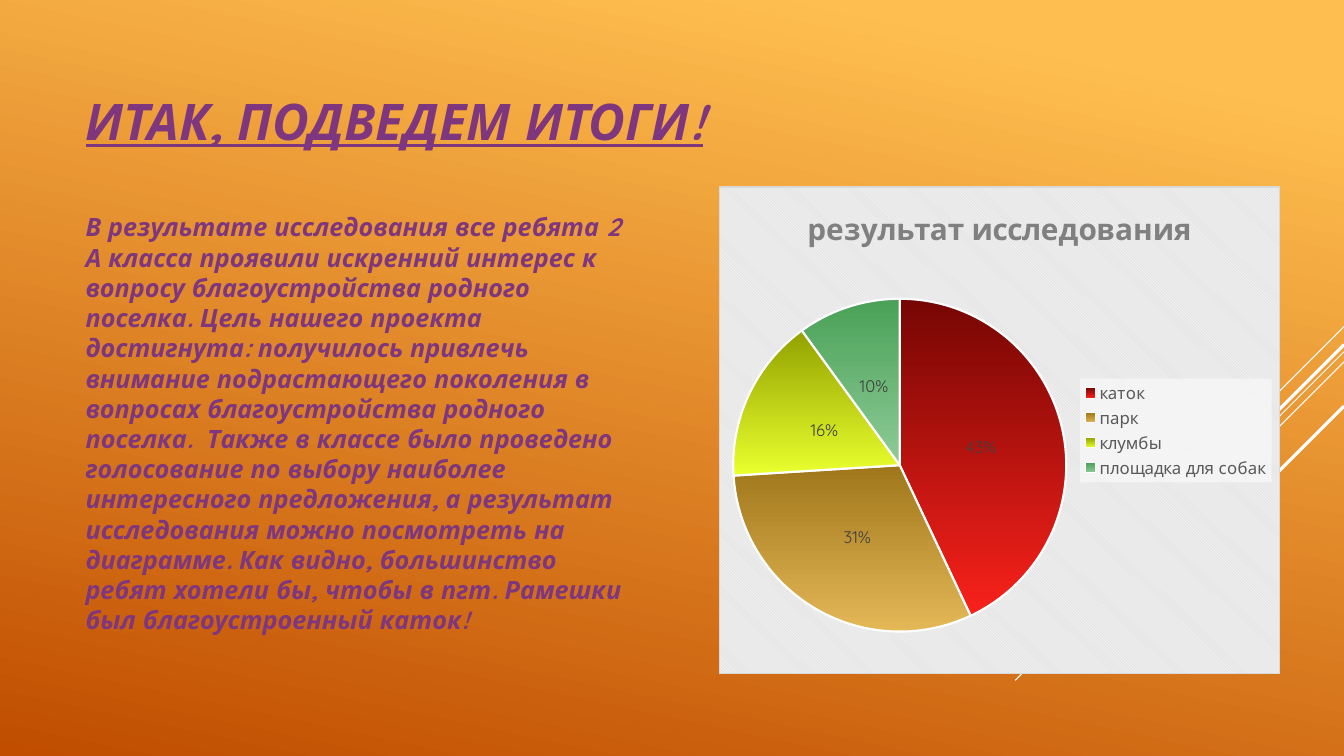
from lxml import etree
from pptx import Presentation
from pptx.chart.data import CategoryChartData
from pptx.dml.color import RGBColor
from pptx.enum.chart import XL_CHART_TYPE, XL_LABEL_POSITION, XL_LEGEND_POSITION
from pptx.enum.text import MSO_ANCHOR
from pptx.oxml import parse_xml
from pptx.oxml.ns import nsdecls, qn
from pptx.util import Inches, Pt

FONT = "Quicksand"
COLORS = {
    "sun": "FFBF50", "rust": "C04D00", "purple": "7E367E", "white": "FFFFFF",
    "title": "808080", "legend": "595959", "label": "404040",
    "stripe": "E6E6E6", "border": "D9D9D9",
}
TITLE = "ИТАК, ПОДВЕДЕМ ИТОГИ!"
BODY = (
    "В результате исследования все ребята 2 А класса проявили искренний интерес "
    "к вопросу благоустройства родного поселка. Цель нашего проекта достигнута: "
    "получилось привлечь внимание подрастающего поколения в вопросах "
    "благоустройства родного поселка.  Также в классе было проведено голосование "
    "по выбору наиболее интересного предложения, а результат исследования можно "
    "посмотреть на диаграмме. Как видно, большинство ребят хотели бы, чтобы в "
    "пгт. Рамешки был благоустроенный каток!"
)
TEXTS = [
    (TITLE, (0.75, 0.68, 9.33, 0.87), MSO_ANCHOR.BOTTOM, 0.9,
     {"size": Pt(36), "underline": True}),
    (BODY, (0.75, 2.05, 5.68, 4.99), MSO_ANCHOR.TOP, 1.0, {"size": Pt(18)}),
]
CHART_TITLE = "результат исследования"
CHART_BOX = (7.13, 1.85, 5.57, 4.84)
VOTES = [
    ("каток", 43, "760603", "F9211B"),
    ("парк", 31, "9F761A", "E4B857"),
    ("клумбы", 16, "92A200", "EAFF2E"),
    ("площадка для собак", 10, "4AA157", "8ECB97"),
]
SLIDE_W = 13.33
RAYS = [(3.24, 1, 0.75), (3.49, 3.26, 0.75), (3.59, 2.07, 0.75),
        (3.42, 1.91, 2.25), (4.03, 1.39, 2.25)]


def rgb(name):
    return RGBColor.from_string(COLORS.get(name, name))


def style(font, **values):
    color = values.pop("color")
    for key, value in {"name": FONT, **values}.items():
        setattr(font, key, value)
    font.color.rgb = rgb(color)


def gradient(fill, angle, stops):
    fill.gradient()
    fill.gradient_angle = 360 - angle
    for stop, (pos, color) in zip(fill.gradient_stops, stops):
        stop.position = pos
        stop.color.rgb = rgb(color)


def add_format(parent, content):
    sp_pr = parse_xml(f'<c:spPr {nsdecls("c", "a")}>{content}</c:spPr>')
    parent.find(qn("c:txPr")).addprevious(sp_pr)


def solid(color, extra=""):
    return (f'<a:solidFill><a:srgbClr val="{COLORS[color]}">{extra}'
            '</a:srgbClr></a:solidFill>')


def add_ray(s, top, span, width):
    c = s.shapes.add_connector(1, Inches(SLIDE_W), Inches(top),
                               Inches(SLIDE_W - span), Inches(top + span))
    c.line.color.rgb = rgb("white")
    c.line.width = Pt(width)
    etree.SubElement(c._element.spPr, qn("a:effectLst"))


def add_text(s, text, box, anchor, spacing, values):
    tf = s.shapes.add_textbox(*map(Inches, box)).text_frame
    tf.word_wrap = True
    tf.vertical_anchor = anchor
    p = tf.paragraphs[0]
    p.line_spacing = spacing
    r = p.add_run()
    r.text = text
    style(r.font, color="purple", bold=True, italic=True, **values)


def add_pie(s):
    data = CategoryChartData()
    data.categories = [vote[0] for vote in VOTES]
    data.add_series(CHART_TITLE, [vote[1] for vote in VOTES])
    chart = s.shapes.add_chart(XL_CHART_TYPE.PIE, *map(Inches, CHART_BOX), data).chart
    style(chart.font, size=Pt(10), color="white")
    add_format(chart._chartSpace,
               '<a:pattFill prst="dkDnDiag">'
               f'<a:fgClr><a:srgbClr val="{COLORS["white"]}"/></a:fgClr>'
               f'<a:bgClr><a:srgbClr val="{COLORS["stripe"]}"/></a:bgClr></a:pattFill>'
               f'<a:ln w="9525">{solid("border")}</a:ln>')

    chart.has_title = True
    tf = chart.chart_title.text_frame
    tf.text = CHART_TITLE
    style(tf.paragraphs[0].runs[0].font, size=Pt(21.3), bold=True, color="title")

    chart.has_legend = True
    legend = chart.legend
    legend.position = XL_LEGEND_POSITION.RIGHT
    legend.include_in_layout = False
    style(legend.font, size=Pt(12), color="legend")
    add_format(legend._element, solid("white", '<a:alpha val="50000"/>'))

    plot = chart.plots[0]
    plot.vary_by_categories = True
    for i, (_, _, dark, light) in enumerate(VOTES):
        fmt = plot.series[0].points[i].format
        gradient(fmt.fill, 90, [(0, dark), (1, light)])
        fmt.line.color.rgb = rgb("white")
        fmt.line.width = Pt(1.5)
    plot.has_data_labels = True
    labels = plot.data_labels
    for key, value in {"show_percentage": True, "show_value": False,
                       "number_format": "0%", "number_format_is_linked": False,
                       "position": XL_LABEL_POSITION.CENTER}.items():
        setattr(labels, key, value)
    style(labels.font, size=Pt(12), color="label")


def main():
    prs = Presentation()
    prs.slide_width, prs.slide_height = Inches(SLIDE_W), Inches(7.5)
    s = prs.slides.add_slide(prs.slide_layouts[6])
    gradient(s.background.fill, 102, [(0.1, "sun"), (1, "rust")])
    for ray in RAYS:
        add_ray(s, *ray)
    for item in TEXTS:
        add_text(s, *item)
    add_pie(s)
    prs.save("out.pptx")


if __name__ == "__main__":
    main()
